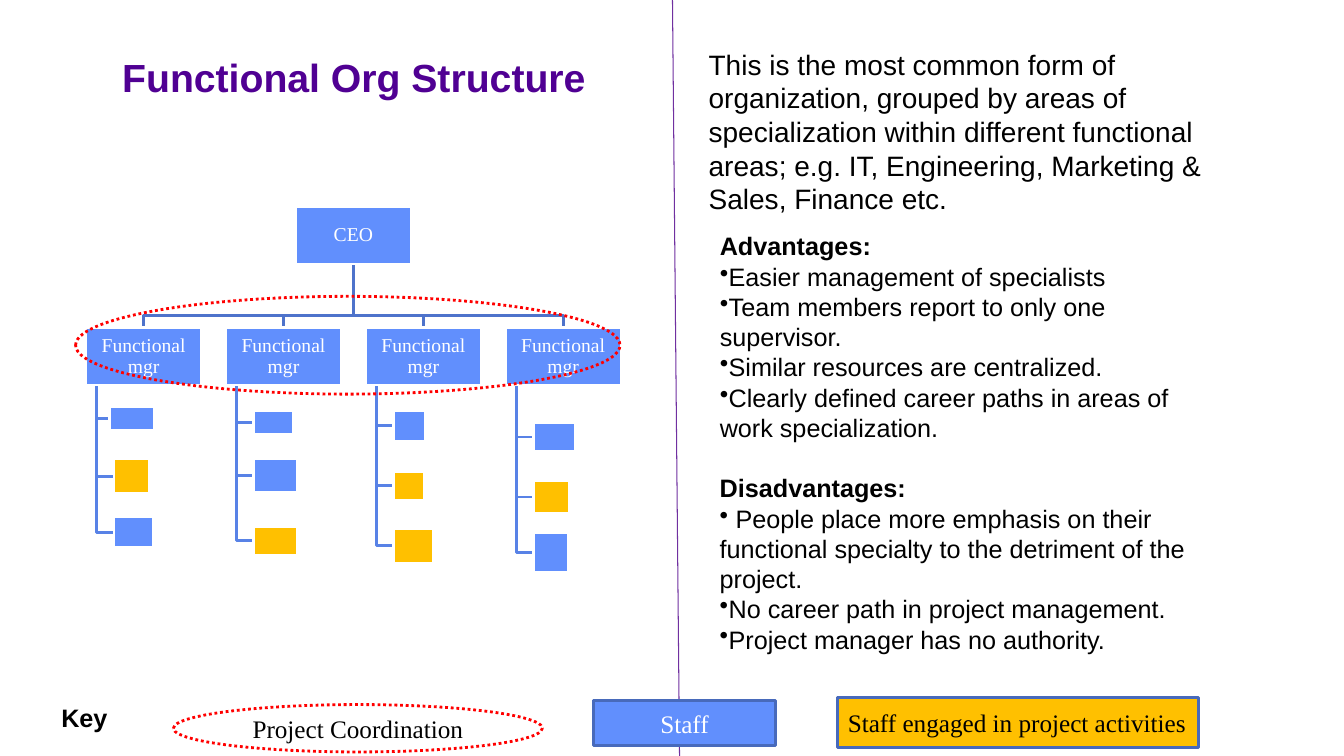
from pptx import Presentation
from pptx import util as u
from pptx.dml.color import RGBColor
from pptx.enum import dml, shapes, text
from pptx.oxml.ns import qn
from lxml import etree

THEME = {
    "blue": "618FFD", "gold": "FFC000", "white": "FFFFFF", "black": "000000",
    "red": "FF0000", "title": "500093", "rule": "7030A0", "edge": "486ABB",
    "trunk": "4E73CB", "twig": "5882E6",
    "sans": "Arial", "serif": "Times New Roman",
    "head": 28, "lead": 20, "body": 18, "node": 14, "line": 2, "thin": 0.75,
}

TITLE = "Functional Org Structure"
LEAD = ("This is the most common form of organization, grouped by areas of "
        "specialization within different functional areas; e.g. IT, "
        "Engineering, Marketing & Sales, Finance etc.")
LISTS = [
    (2.24, 4.92, "Advantages:", [
        "Easier management of specialists",
        "Team members report to only one supervisor.",
        "Similar resources are centralized.",
        "Clearly defined career paths in areas of work specialization.",
    ]),
    (4.64, 4.84, "Disadvantages:", [
        " People place more emphasis on their functional specialty to the "
        "detriment of the project.",
        "No career path in project management.",
        "Project manager has no authority.",
    ]),
]
BOSS = "CEO"
MGR = "Functional mgr"
TEAMS = [
    [("blue", 0.13, 4.03, 0.44, 0.24), ("gold", 0.17, 4.55, 0.35, 0.35),
     ("blue", 0.17, 5.13, 0.39, 0.3)],
    [("blue", 0.17, 4.07, 0.39, 0.24), ("blue", 0.17, 4.55, 0.43, 0.34),
     ("gold", 0.17, 5.22, 0.43, 0.29)],
    [("blue", 0.17, 4.07, 0.32, 0.31), ("gold", 0.17, 4.68, 0.31, 0.28),
     ("gold", 0.17, 5.24, 0.39, 0.35)],
    [("blue", 0.17, 4.19, 0.42, 0.29), ("gold", 0.17, 4.77, 0.36, 0.32),
     ("blue", 0.17, 5.28, 0.35, 0.4)],
]
NODE_W, NODE_H = 1.15, 0.57
BOSS_X, BOSS_Y = 2.93, 2.05
MGR_X, MGR_Y, STEP = 0.85, 3.25, 1.387
BUS_Y, STEM = 3.13, 0.11

RECT, OVAL = shapes.MSO_SHAPE.RECTANGLE, shapes.MSO_SHAPE.OVAL
MID, LEFT = text.PP_ALIGN.CENTER, text.PP_ALIGN.LEFT

prs = Presentation()
prs.slide_width, prs.slide_height = u.Inches(13.33), u.Inches(7.5)
page = prs.slides.add_slide(prs.slide_layouts[6]).shapes


def tint(name):
    return RGBColor.from_string(THEME[name])


def style(para, size, face, color, bold=False, align=LEFT):
    para.alignment = align
    for run in para.runs:
        font = run.font
        font.size, font.name, font.bold = u.Pt(THEME[size]), THEME[face], bold
        font.color.rgb = tint(color)


def stroke(item, color, width="line"):
    item.line.color.rgb = tint(color)
    item.line.width = u.Pt(THEME[width])


def add_form(kind, spot, fill, edge):
    form = page.add_shape(kind, *map(u.Inches, spot))
    form.shadow.inherit = False
    if fill:
        form.fill.solid()
        form.fill.fore_color.rgb = tint(fill)
    else:
        form.fill.background()
        form.line.dash_style = dml.MSO_LINE.ROUND_DOT
    stroke(form, edge)
    return form


def label(form, words, size, color, align=MID):
    frame = form.text_frame
    frame.word_wrap = True
    frame.vertical_anchor = text.MSO_ANCHOR.MIDDLE
    frame.text = words
    style(frame.paragraphs[0], size, "serif", color, align=align)
    return frame


def add_node(left, top, words):
    form = add_form(RECT, (left, top, NODE_W, NODE_H), "blue", "white")
    frame = label(form, words, "node", "white")
    frame.margin_left = frame.margin_right = u.Inches(0.01)
    frame.margin_top = frame.margin_bottom = u.Inches(0.01)
    frame.paragraphs[0].line_spacing = 0.9


def add_link(points, color):
    spots = [(u.Inches(x), u.Inches(y)) for x, y in points]
    pen = page.build_freeform(*spots[0])
    pen.add_line_segments(spots[1:], close=False)
    link = pen.convert_to_shape()
    link.shadow.inherit = False
    link.fill.background()
    stroke(link, color)


def add_note(spot, words, size, color="black", bold=False, align=LEFT):
    note = page.add_textbox(*map(u.Inches, spot))
    frame = note.text_frame
    frame.word_wrap = True
    frame.auto_size = text.MSO_AUTO_SIZE.SHAPE_TO_FIT_TEXT
    frame.text = words
    style(frame.paragraphs[0], size, "sans", color, bold, align)
    return frame


def add_list(top, width, head, items):
    frame = add_note((7.04, top, width, 2.22), head, "body", bold=True)
    for item in items:
        para = frame.add_paragraph()
        para.text = item
        style(para, "body", "sans", "black")
        mark = etree.SubElement(para._p.get_or_add_pPr(), qn("a:buChar"))
        mark.set("char", "•")


cols = [MGR_X + i * STEP for i in range(len(TEAMS))]
boss_mid = BOSS_X + NODE_W / 2
for left, team in zip(cols, TEAMS):
    mid, stem = left + NODE_W / 2, left + STEM
    for _, gap, top, _, high in team:
        row = top + high / 2
        add_link([(stem, MGR_Y + NODE_H), (stem, row), (stem + gap, row)],
                 "twig")
    add_link([(boss_mid, BOSS_Y + NODE_H), (boss_mid, BUS_Y),
              (mid, BUS_Y), (mid, MGR_Y)], "trunk")

add_node(BOSS_X, BOSS_Y, BOSS)
for left, team in zip(cols, TEAMS):
    add_node(left, MGR_Y, MGR)
    for fill, gap, top, wide, high in team:
        add_form(RECT, (left + STEM + gap, top, wide, high), fill, "white")

add_form(OVAL, (0.75, 2.94, 5.4, 0.97), None, "red")
title = add_note((1.1, 0.46, 4.82, 0.59), TITLE, "head", "title", True, MID)
title.paragraphs[0].line_spacing = 1.04

label(add_form(OVAL, (1.72, 6.99, 3.66, 0.47), None, "red"),
      "Project Coordination", "body", "black")
label(add_form(RECT, (8.31, 6.92, 3.58, 0.5), "gold", "edge"),
      "Staff engaged in project activities", "body", "black", LEFT)
rule = page.add_connector(shapes.MSO_CONNECTOR.STRAIGHT,
                          *map(u.Inches, (6.67, 0, 6.74, 7.5)))
stroke(rule, "rule", "thin")
etree.SubElement(rule._element.spPr, qn("a:effectLst"))
label(add_form(RECT, (5.89, 6.95, 1.8, 0.45), "blue", "edge"),
      "Staff", "body", "white")

add_note((6.93, 0.42, 5.51, 1.78), LEAD, "lead")
for part in LISTS:
    add_list(*part)
add_note((0.51, 6.92, 0.94, 0.4), "Key", "body", bold=True)

prs.save("out.pptx")
